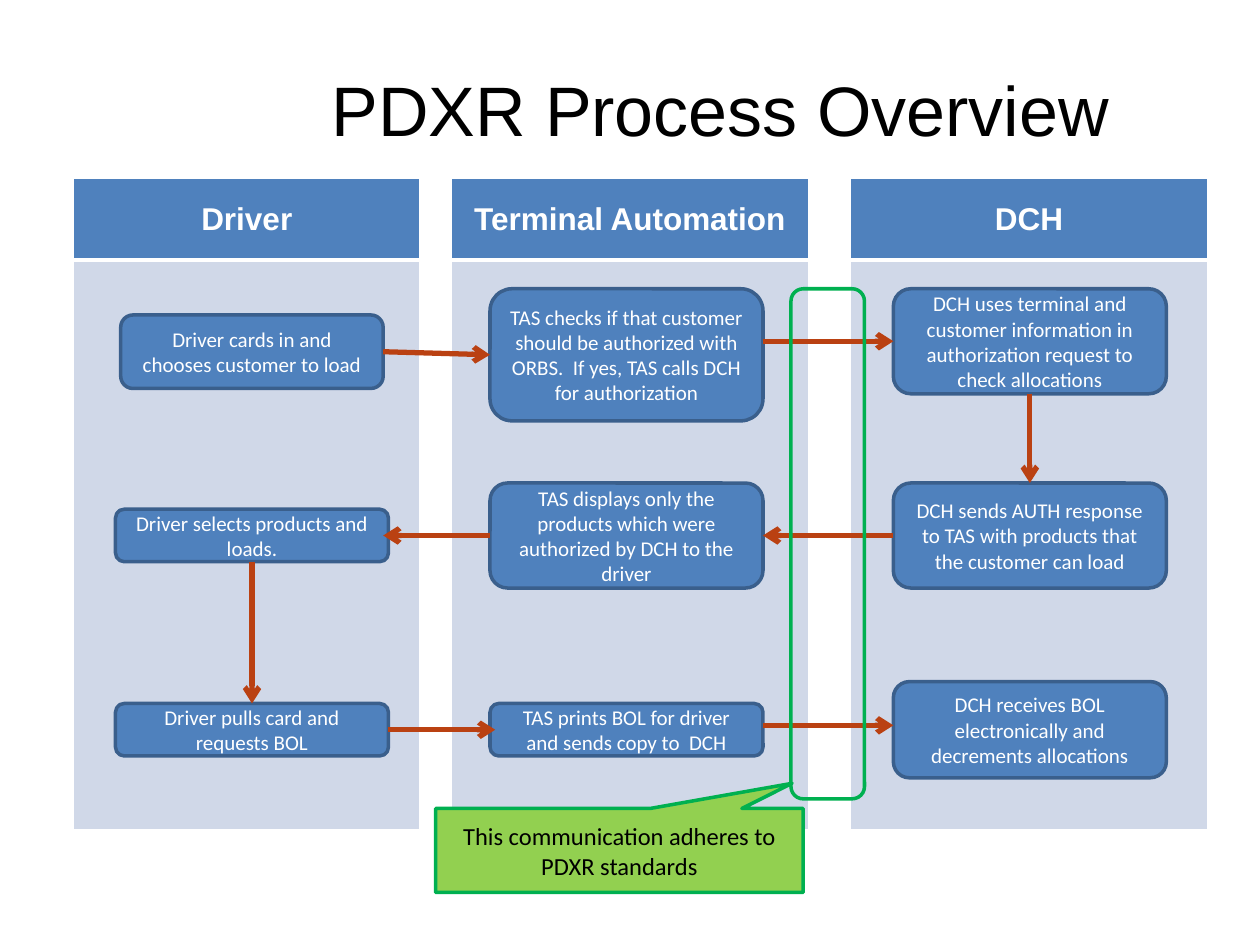
import pptx
import pptx.util
import pptx.dml.color
import pptx.enum.shapes
import pptx.enum.text
import pptx.oxml.ns
import lxml.etree

Pt = pptx.util.Pt
RGBColor = pptx.dml.color.RGBColor
SHAPE = pptx.enum.shapes.MSO_SHAPE
CENTER = pptx.enum.text.PP_ALIGN.CENTER
MIDDLE = pptx.enum.text.MSO_ANCHOR.MIDDLE
qn = pptx.oxml.ns.qn

WHITE = RGBColor(0xFF, 0xFF, 0xFF)
BLACK = RGBColor(0, 0, 0)
BLUE = RGBColor(0x4F, 0x81, 0xBD)
DARK_BLUE = RGBColor(0x3A, 0x5F, 0x8C)
PALE_BLUE = RGBColor(0xD0, 0xD8, 0xE8)
RUST = RGBColor(0xBA, 0x41, 0x12)
GREEN = RGBColor(0, 0xB0, 0x50)
LIME = RGBColor(0x92, 0xD0, 0x50)


def write(frame, text, font, size, color, bold=False):
    frame.word_wrap = True
    para = frame.paragraphs[0]
    para.alignment = CENTER
    span = para.add_run()
    span.text = text
    span.font.name = font
    span.font.size = Pt(size)
    span.font.bold = bold
    span.font.color.rgb = color


def add_box(kind, bounds, fill, line):
    box = page.shapes.add_shape(kind, *[Pt(length) for length in bounds])
    box.shadow.inherit = False
    if fill is None:
        box.fill.background()
    else:
        box.fill.solid()
        box.fill.fore_color.rgb = fill
    box.line.color.rgb = line
    box.line.width = Pt(2)
    box.text_frame.vertical_anchor = MIDDLE
    return box


deck = pptx.Presentation()
deck.slide_width = Pt(720)
deck.slide_height = Pt(540)
page = deck.slides.add_slide(deck.slide_layouts[6])

title = page.shapes.add_textbox(Pt(139), Pt(26), Pt(545), Pt(72))
title.text_frame.vertical_anchor = MIDDLE
write(title.text_frame, "PDXR Process Overview", "Arial", 40, BLACK)

column_widths = [198, 18, 204, 24, 204]
row_heights = [46.5, 325.5]
lanes = page.shapes.add_table(
    2, 5, Pt(42), Pt(102), Pt(sum(column_widths)), Pt(sum(row_heights))).table
for column, width in zip(lanes.columns, column_widths):
    column.width = Pt(width)
for row, height in zip(lanes.rows, row_heights):
    row.height = Pt(height)
for gap in (1, 3):
    lanes.cell(0, gap).merge(lanes.cell(1, gap))
for index, heading in zip((0, 2, 4), ("Driver", "Terminal Automation", "DCH")):
    write(lanes.cell(0, index).text_frame, heading, "Arial", 18, WHITE, True)

for row in range(2):
    for column in range(5):
        cell = lanes.cell(row, column)
        cell.vertical_anchor = MIDDLE
        if column % 2:
            cell.fill.background()
        else:
            cell.fill.solid()
            cell.fill.fore_color.rgb = PALE_BLUE if row else BLUE
        divider = "lnT" if row else "lnB"
        properties = cell._tc.get_or_add_tcPr()
        for position, side in enumerate(("lnL", "lnR", "lnT", "lnB")):
            width = 3 if side == divider and column % 2 == 0 else 1
            border = lxml.etree.Element(qn("a:" + side), w=str(Pt(width)))
            fill = lxml.etree.SubElement(border, qn("a:solidFill"))
            lxml.etree.SubElement(fill, qn("a:srgbClr"), val=str(WHITE))
            properties.insert(position, border)

steps = [
    ("driver cards", (69, 180, 150, 42),
     "Driver cards in and chooses customer to load"),
    ("tas checks", (280, 165, 156, 75.5),
     "TAS checks if that customer should be authorized with ORBS.  "
     "If yes, TAS calls DCH for authorization"),
    ("dch checks", (510.5, 165, 156, 60),
     "DCH uses terminal and customer information in authorization request "
     "to check allocations"),
    ("dch responds", (510.5, 276, 156, 60),
     "DCH sends AUTH response to TAS with products that the customer can load"),
    ("tas displays", (280, 276, 156, 60),
     "TAS displays only the products which were authorized by DCH to the driver"),
    ("driver loads", (66, 291, 156, 30), "Driver selects products and loads."),
    ("driver requests", (66, 402, 156, 30), "Driver pulls card and requests BOL"),
    ("tas prints", (280, 402, 156, 30),
     "TAS prints BOL for driver and sends copy to  DCH"),
    ("dch receives", (510.5, 389.5, 156, 55),
     "DCH receives BOL electronically and decrements allocations"),
]
boxes = {}
for name, bounds, text in steps:
    boxes[name] = add_box(SHAPE.ROUNDED_RECTANGLE, bounds, BLUE, DARK_BLUE)
    write(boxes[name].text_frame, text, "Calibri", 12, WHITE)

TOP, LEFT, BOTTOM, RIGHT = range(4)
arrows = [
    ((219, 201), (280, 202.75), "tailEnd", ("driver cards", RIGHT), ("tas checks", LEFT)),
    ((219, 306), (280, 306), "headEnd", None, ("tas displays", LEFT)),
    ((222, 417), (283, 417), "tailEnd", ("driver requests", RIGHT), None),
    ((436, 195), (510.5, 195), "tailEnd", None, ("dch checks", LEFT)),
    ((436, 306), (510.5, 306), "headEnd", ("tas displays", RIGHT), ("dch responds", LEFT)),
    ((436, 414.5), (510.5, 414.5), "tailEnd", None, None),
    ((588.5, 225), (588.5, 276), "tailEnd", ("dch checks", BOTTOM), ("dch responds", TOP)),
    ((144, 321), (144, 402), "tailEnd", ("driver loads", BOTTOM), ("driver requests", TOP)),
]
for start, finish, tip, source, target in arrows:
    arrow = page.shapes.add_connector(
        pptx.enum.shapes.MSO_CONNECTOR.STRAIGHT,
        *[Pt(length) for length in start + finish])
    if source:
        arrow.begin_connect(boxes[source[0]], source[1])
    if target:
        arrow.end_connect(boxes[target[0]], target[1])
    arrow.line.color.rgb = RUST
    arrow.line.width = Pt(3)
    lxml.etree.SubElement(arrow.line._get_or_add_ln(), qn("a:" + tip), type="arrow")
    lxml.etree.SubElement(arrow._element.spPr, qn("a:effectLst"))

add_box(SHAPE.ROUNDED_RECTANGLE, (452, 165, 42, 291.5), None, GREEN)
callout = add_box(SHAPE.RECTANGULAR_CALLOUT, (249, 462, 210, 48), LIME, GREEN)
callout.adjustments[0] = 0.47
callout.adjustments[1] = -0.8
write(callout.text_frame, "This communication adheres to PDXR standards",
      "Calibri", 14, BLACK)

deck.save("out.pptx")
